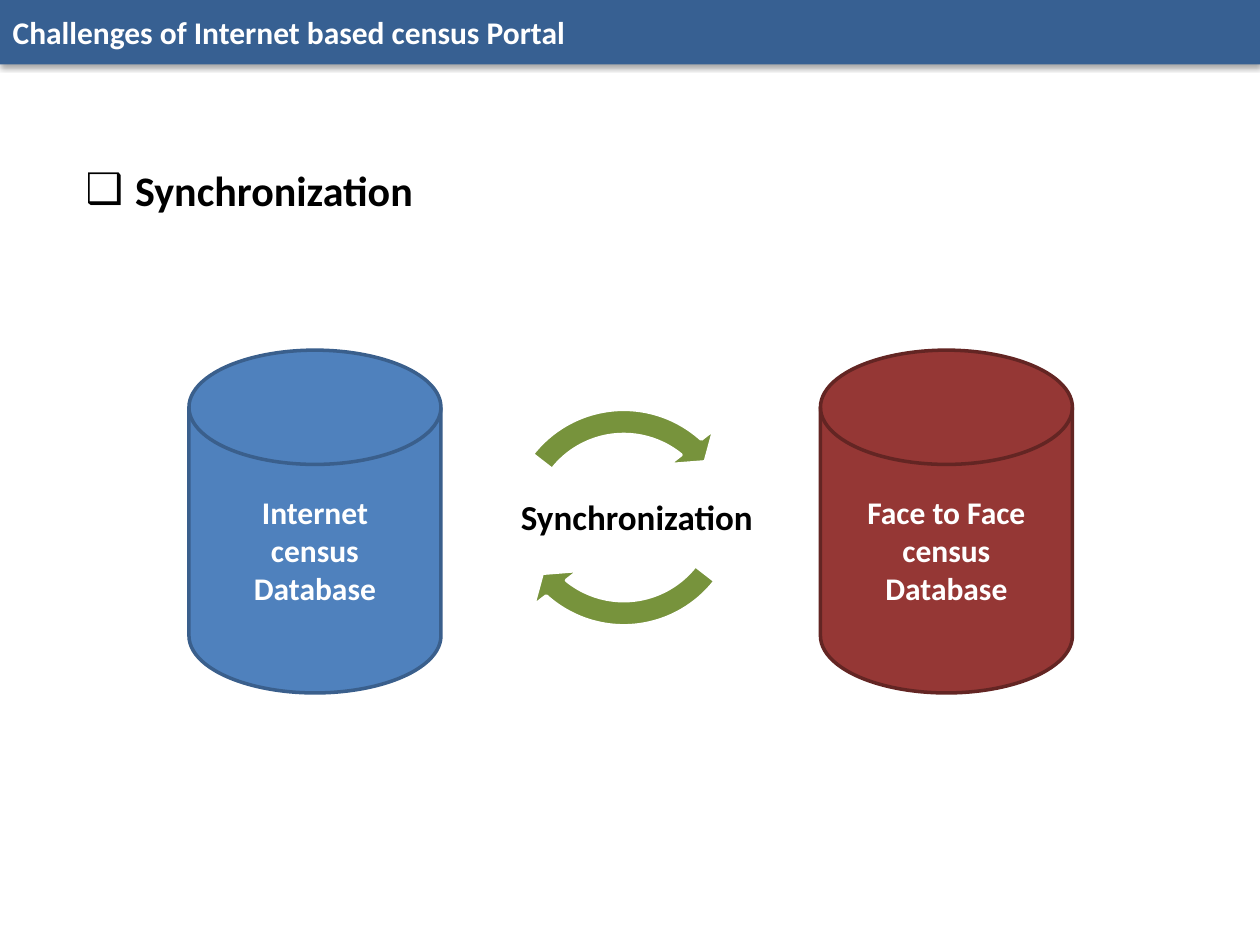
"""Build a slide on synchronising internet and face-to-face census databases."""
from lxml import etree
from pptx import Presentation
from pptx.dml.color import RGBColor
from pptx.enum.shapes import MSO_SHAPE
from pptx.enum.text import MSO_ANCHOR, MSO_AUTO_SIZE, PP_ALIGN
from pptx.oxml.ns import qn
from pptx.util import Cm, Pt

CYLINDER = MSO_SHAPE.FLOWCHART_MAGNETIC_DISK
CIRCULAR_ARROW = MSO_SHAPE.CIRCULAR_ARROW
MIDDLE, TOP = MSO_ANCHOR.MIDDLE, MSO_ANCHOR.TOP
LEFT, CENTER = PP_ALIGN.LEFT, PP_ALIGN.CENTER
NO_AUTOFIT = MSO_AUTO_SIZE.NONE

FONT = "Calibri"
COLORS = {
    "bar": "376092",
    "internet": "4F81BD",
    "internet_edge": "3A5F8C",
    "face": "953735",
    "face_edge": "632523",
    "arrow": "77933C",
    "white": "FFFFFF",
    "black": "000000",
}

TITLE = "Challenges of Internet based census Portal"
HEADING = "Synchronization"
CYCLE_LABEL = "Synchronization"
DATABASES = [
    ("internet", ["Internet", "census", "Database"]),
    ("face", ["Face to Face census", "Database"]),
]
ARROWS = [(7.62, 78.49, 22.66), (7.92, 186.49, 130.66)]

SLIDE_WIDTH, SLIDE_HEIGHT = 25.4, 19.05
BAR_HEIGHT = 1.3
DATABASE_LEFT, DATABASE_TOP, DATABASE_STEP = 3.81, 7.06, 12.73
DATABASE_WIDTH, DATABASE_HEIGHT = 5.08, 6.91
ARROW_LEFT, ARROW_SIZE = 9.91, 5.33
HEADING_INDENT = 1


def rgb(name):
    return RGBColor.from_string(COLORS[name])


def place(shape, left, top, width, height):
    shape.left, shape.top = Cm(left), Cm(top)
    shape.width, shape.height = Cm(width), Cm(height)


def paint(shape, fill, edge):
    shape.shadow.inherit = False
    shape.fill.solid()
    shape.fill.fore_color.rgb = rgb(fill)
    shape.line.color.rgb = rgb(edge)
    shape.line.width = Pt(2)


def write(shape, lines, size, color, alignment, anchor=MIDDLE):
    frame = shape.text_frame
    frame.word_wrap = True
    frame.auto_size = NO_AUTOFIT
    frame.vertical_anchor = anchor
    for index, line in enumerate(lines):
        paragraph = frame.add_paragraph() if index else frame.paragraphs[0]
        paragraph.alignment = alignment
        paragraph.space_before = Pt(0)
        run = paragraph.add_run()
        run.text = line
        run.font.name = FONT
        run.font.size = Pt(size)
        run.font.bold = True
        run.font.color.rgb = rgb(color)
    return frame


def add_bar_shadow(shape):
    effects = etree.SubElement(shape.element.spPr, qn("a:effectLst"))
    shadow = etree.SubElement(
        effects, qn("a:outerShdw"), blurRad=str(Pt(3.1)), dist=str(Pt(1.8)),
        dir="5400000", rotWithShape="0",
    )
    color = etree.SubElement(shadow, qn("a:srgbClr"), val=COLORS["black"])
    etree.SubElement(color, qn("a:alpha"), val="35000")


def add_title(slide):
    title = slide.shapes.title
    place(title, 0, 0, SLIDE_WIDTH, BAR_HEIGHT)
    title.fill.solid()
    title.fill.fore_color.rgb = rgb("bar")
    title.line.fill.background()
    add_bar_shadow(title)
    write(title, [TITLE], 18, "white", LEFT)


def add_heading(slide):
    body = slide.placeholders[1]
    place(body, 1.47, 3.18, 7.82, 1.27)
    frame = write(body, [HEADING], 24, "black", LEFT, TOP)
    properties = frame.paragraphs[0]._p.get_or_add_pPr()
    properties.set("marL", str(Cm(HEADING_INDENT)))
    properties.set("indent", str(-Cm(HEADING_INDENT)))
    etree.SubElement(properties, qn("a:buChar"), char="❑")


def add_cycle(slide):
    label = slide.shapes.add_textbox(Cm(9.55), Cm(9.17), Cm(6.58), Cm(2.59))
    frame = write(label, [CYCLE_LABEL], 20, "black", CENTER)
    frame.paragraphs[0].line_spacing = 0.9
    for top, head_angle, tail_angle in ARROWS:
        arrow = slide.shapes.add_shape(
            CIRCULAR_ARROW, Cm(ARROW_LEFT), Cm(top), Cm(ARROW_SIZE), Cm(ARROW_SIZE)
        )
        for index, value in enumerate((0.095, 6.85, head_angle, tail_angle, 0.11)):
            arrow.adjustments[index] = value
        paint(arrow, "arrow", "white")


def add_databases(slide):
    for index, (name, lines) in enumerate(DATABASES):
        left = DATABASE_LEFT + index * DATABASE_STEP
        database = slide.shapes.add_shape(
            CYLINDER, Cm(left), Cm(DATABASE_TOP), Cm(DATABASE_WIDTH), Cm(DATABASE_HEIGHT)
        )
        paint(database, name, f"{name}_edge")
        write(database, lines, 18, "white", CENTER)


def main():
    presentation = Presentation()
    presentation.slide_width = Cm(SLIDE_WIDTH)
    presentation.slide_height = Cm(SLIDE_HEIGHT)
    slide = presentation.slides.add_slide(presentation.slide_layouts[1])
    add_title(slide)
    add_heading(slide)
    add_cycle(slide)
    add_databases(slide)
    presentation.save("out.pptx")


if __name__ == "__main__":
    main()
